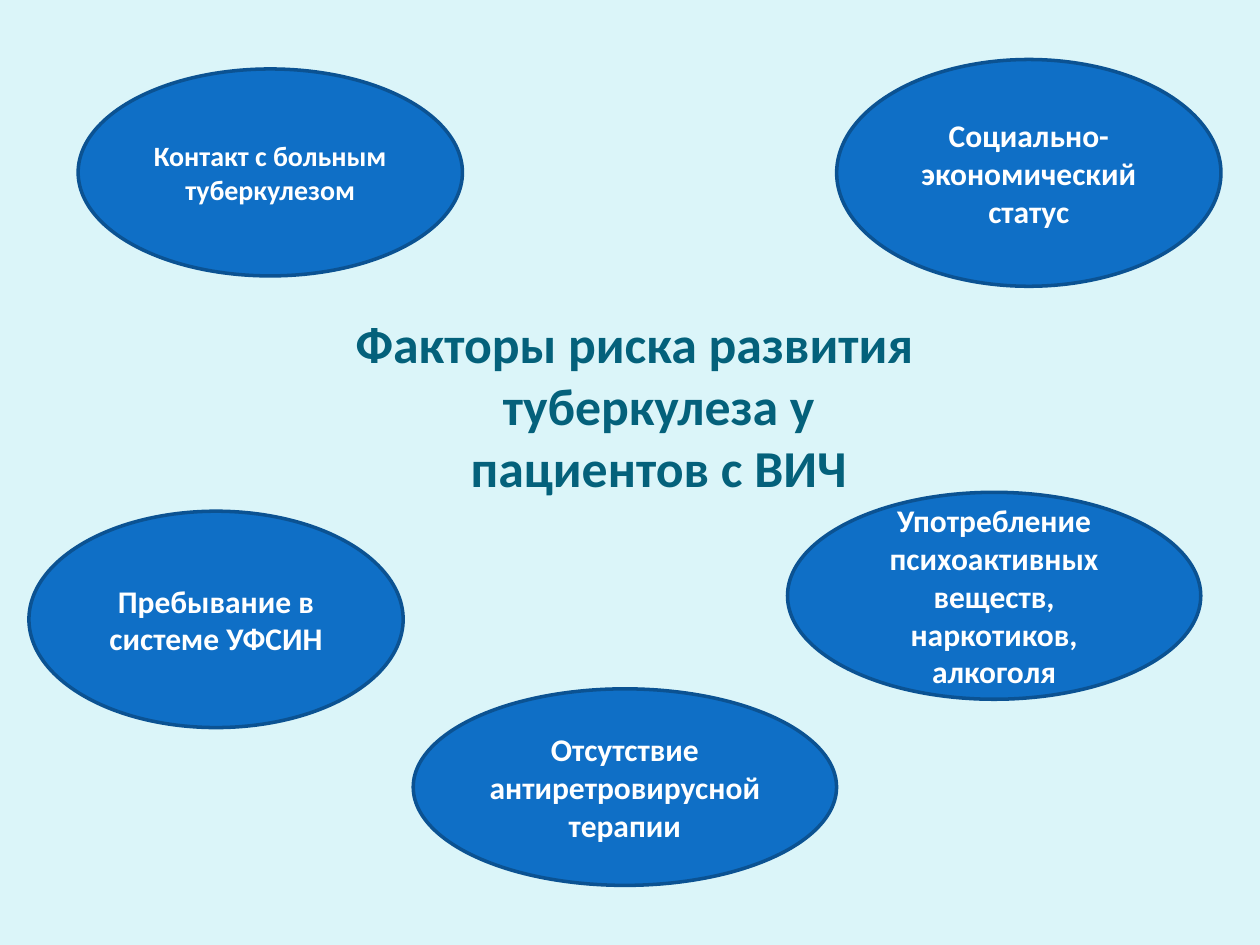
from pptx import Presentation
from pptx.dml.color import RGBColor
from pptx.enum.shapes import MSO_SHAPE
from pptx.enum.text import MSO_ANCHOR, MSO_AUTO_SIZE, PP_ALIGN
from pptx.util import Inches, Pt

ELLIPSE = MSO_SHAPE.OVAL
CENTER = PP_ALIGN.CENTER
TOP, MIDDLE = MSO_ANCHOR.TOP, MSO_ANCHOR.MIDDLE
NO_AUTOFIT = MSO_AUTO_SIZE.NONE
TITLE_ONLY_LAYOUT = 5

TITLE = "Факторы риска развития туберкулеза у пациентов с ВИЧ"

# Text, box in percent of the slide (left, top, width, height), font size
RISK_FACTORS = [
    ("Контакт с больным туберкулезом", (6.2, 7.3, 30.5, 21.9), 16),
    ("Пребывание в системе УФСИН", (2.3, 54.1, 29.7, 22.9), 18),
    ("Социально-экономический статус", (66.4, 6.3, 30.5, 24), 18),
    ("Употребление психоактивных веществ, наркотиков, алкоголя",
     (62.5, 52.1, 32.8, 21.9), 18),
    ("Отсутствие антиретровирусной терапии", (32.8, 72.9, 33.6, 20.8), 18),
]


def color(hex_string):
    return RGBColor.from_string(hex_string)


class RiskSlide:
    """Holds the style and the current slide; boxes are percent of the slide."""

    FONT = "Calibri"
    BACKGROUND = "DBF5F9"
    TITLE_COLOR = "04617B"
    FILL = "0F6FC6"
    OUTLINE = "0B5292"
    LABEL_COLOR = "FFFFFF"

    def __init__(self, presentation):
        self.width = presentation.slide_width
        self.height = presentation.slide_height
        layout = presentation.slide_layouts[TITLE_ONLY_LAYOUT]
        self.slide = presentation.slides.add_slide(layout)
        background = self.slide.background.fill
        background.solid()
        background.fore_color.rgb = color(self.BACKGROUND)

    def place(self, box):
        """Turn percentages into left, top, width and height lengths."""
        sides = (self.width, self.height) * 2
        return [round(side * share / 100) for side, share in zip(sides, box)]

    def add_label(self, shape, text, size, text_color, anchor):
        frame = shape.text_frame
        frame.word_wrap = True
        frame.auto_size = NO_AUTOFIT
        frame.vertical_anchor = anchor
        paragraph = frame.paragraphs[0]
        paragraph.alignment = CENTER
        run = paragraph.add_run()
        run.text = text
        run.font.name = self.FONT
        run.font.size = Pt(size)
        run.font.bold = True
        run.font.color.rgb = color(text_color)
        return paragraph

    def title(self, text, box, size, hanging):
        shape = self.slide.shapes.title
        shape.left, shape.top, shape.width, shape.height = self.place(box)
        paragraph = self.add_label(shape, text, size, self.TITLE_COLOR, TOP)
        properties = paragraph._p.get_or_add_pPr()
        properties.set("marL", str(Inches(hanging)))
        properties.set("indent", str(-Inches(hanging)))

    def ellipse(self, text, box, size):
        shape = self.slide.shapes.add_shape(ELLIPSE, *self.place(box))
        shape.shadow.inherit = False
        shape.fill.solid()
        shape.fill.fore_color.rgb = color(self.FILL)
        shape.line.color.rgb = color(self.OUTLINE)
        shape.line.width = Pt(2)
        self.add_label(shape, text, size, self.LABEL_COLOR, MIDDLE)


def main():
    presentation = Presentation()
    presentation.slide_width = Inches(10)
    presentation.slide_height = Inches(7.5)
    risk_slide = RiskSlide(presentation)
    risk_slide.title(TITLE, (25.8, 32.3, 49.2, 19.7), size=29.6, hanging=0.38)
    for text, box, size in RISK_FACTORS:
        risk_slide.ellipse(text, box, size)
    presentation.save("out.pptx")


if __name__ == "__main__":
    main()
